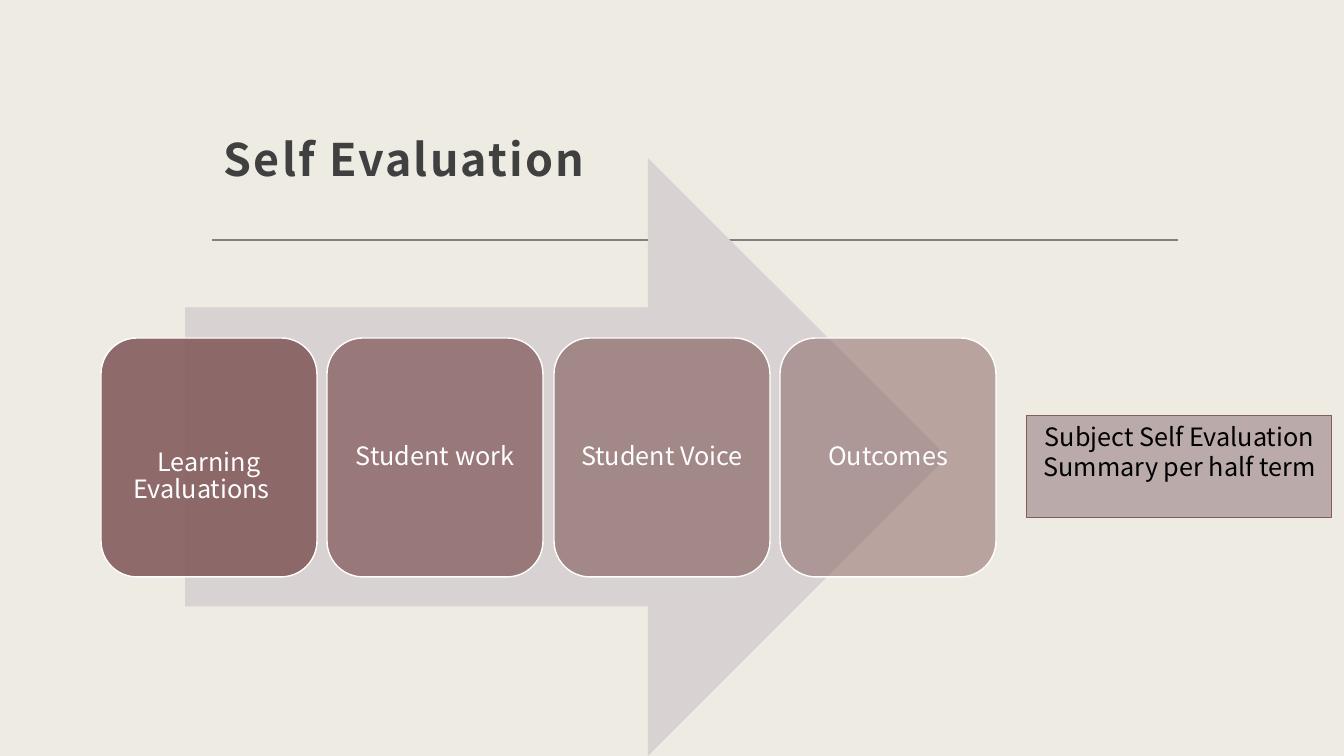
"""Build the Self Evaluation process slide."""
from dataclasses import dataclass

import pptx
import pptx.dml.color
import pptx.enum.shapes
import pptx.enum.text
import pptx.oxml.ns
import pptx.util
from lxml import etree

SHAPES = pptx.enum.shapes.MSO_SHAPE
ALIGN = pptx.enum.text.PP_ALIGN
ANCHOR = pptx.enum.text.MSO_ANCHOR


@dataclass(frozen=True)
class Theme:
    font: str = "Noto Sans CJK JP"
    background: str = "EEEBE2"
    title: str = "404040"
    rule: str = "808080"
    arrow: str = "D9D2D2"
    accent: str = "855D5D"
    note: str = "BAAAAA"
    light: str = "FFFFFF"
    dark: str = "000000"
    title_size: int = 32
    body_size: int = 18


def px(length):
    return pptx.util.Emu(round(length * 914400 / 100.8))


def rgb(color):
    return pptx.dml.color.RGBColor.from_string(color)


def add_child(parent, tag, **attributes):
    return etree.SubElement(parent, pptx.oxml.ns.qn(tag), **attributes)


class SlideBuilder:
    def __init__(self, slide, theme):
        self.slide = slide
        self.theme = theme
        slide.background.fill.solid()
        slide.background.fill.fore_color.rgb = rgb(theme.background)

    def set_text(self, shape, text, color, size, align, anchor, insets, spacing=1.0):
        frame = shape.text_frame
        frame.text = text
        frame.word_wrap = True
        frame.auto_size = pptx.enum.text.MSO_AUTO_SIZE.NONE
        frame.vertical_anchor = anchor
        left, top, right, bottom = insets
        frame.margin_left, frame.margin_top = px(left), px(top)
        frame.margin_right, frame.margin_bottom = px(right), px(bottom)
        para = frame.paragraphs[0]
        para.alignment = align
        para.line_spacing = spacing
        span = para.runs[0]
        span.font.name = self.theme.font
        span.font.size = pptx.util.Pt(size)
        span.font.color.rgb = rgb(color)
        return span

    def title(self, text, left, top, width, height):
        box = self.slide.shapes.title
        box.left, box.top, box.width, box.height = map(px, (left, top, width, height))
        span = self.set_text(box, text, self.theme.title, self.theme.title_size,
                             ALIGN.LEFT, ANCHOR.BOTTOM, (12, 12, 12, 10), 1.3)
        span.font.bold = True
        span.font._element.set("spc", "150")

    def rule(self, left, right, top):
        line = self.slide.shapes.add_connector(
            pptx.enum.shapes.MSO_CONNECTOR.STRAIGHT,
            px(left), px(top), px(right), px(top))
        line.line.color.rgb = rgb(self.theme.rule)
        line.line.width = pptx.util.Pt(2)
        add_child(line._element.spPr, "a:effectLst")

    def shape(self, kind, left, top, width, height, fill, outline=None, weight=1):
        shape = self.slide.shapes.add_shape(
            kind, px(left), px(top), px(width), px(height))
        shape.shadow.inherit = False
        shape.fill.solid()
        shape.fill.fore_color.rgb = rgb(fill)
        if outline:
            shape.line.color.rgb = rgb(outline)
            shape.line.width = pptx.util.Pt(weight)
        else:
            shape.line.fill.background()
        return shape

    def card(self, text, opacity, left, top, width, height, drop):
        card = self.shape(SHAPES.ROUNDED_RECTANGLE, left, top, width, height,
                          self.theme.accent, self.theme.light)
        color = card._element.spPr.find(
            f"{pptx.oxml.ns.qn('a:solidFill')}/{pptx.oxml.ns.qn('a:srgbClr')}")
        add_child(color, "a:alpha", val=str(opacity * 1000))
        self.set_text(card, text, self.theme.light, self.theme.body_size,
                      ALIGN.CENTER, ANCHOR.MIDDLE, (7, 7 + drop, 7, 7), 0.9)

    def note(self, text, left, top, width, height):
        note = self.shape(SHAPES.RECTANGLE, left, top, width, height,
                          self.theme.note, self.theme.accent, 0.75)
        self.set_text(note, text, self.theme.dark, self.theme.body_size,
                      ALIGN.CENTER, ANCHOR.TOP, (10, 5, 10, 5))


def main():
    deck = pptx.Presentation()
    deck.slide_width, deck.slide_height = px(1344), px(756)
    page = deck.slides.add_slide(deck.slide_layouts[5])
    theme = Theme()
    builder = SlideBuilder(page, theme)

    builder.rule(212, 1178, 240)
    builder.title("Self Evaluation", 212, 48, 967, 148)
    builder.shape(SHAPES.RIGHT_ARROW, 185, 158, 762, 598, theme.arrow)

    steps = [
        ("Learning Evaluations\t", 90, 38),
        ("Student work", 77, 0),
        ("Student Voice", 63, 0),
        ("Outcomes", 50, 0),
    ]
    for index, (text, opacity, drop) in enumerate(steps):
        left = 101 + index * 453 // 2
        builder.card(text, opacity, left, 338, 216, 239, drop)

    builder.note("Subject Self Evaluation Summary per half term", 1027, 416, 305, 102)
    deck.save("out.pptx")


if __name__ == "__main__":
    main()
